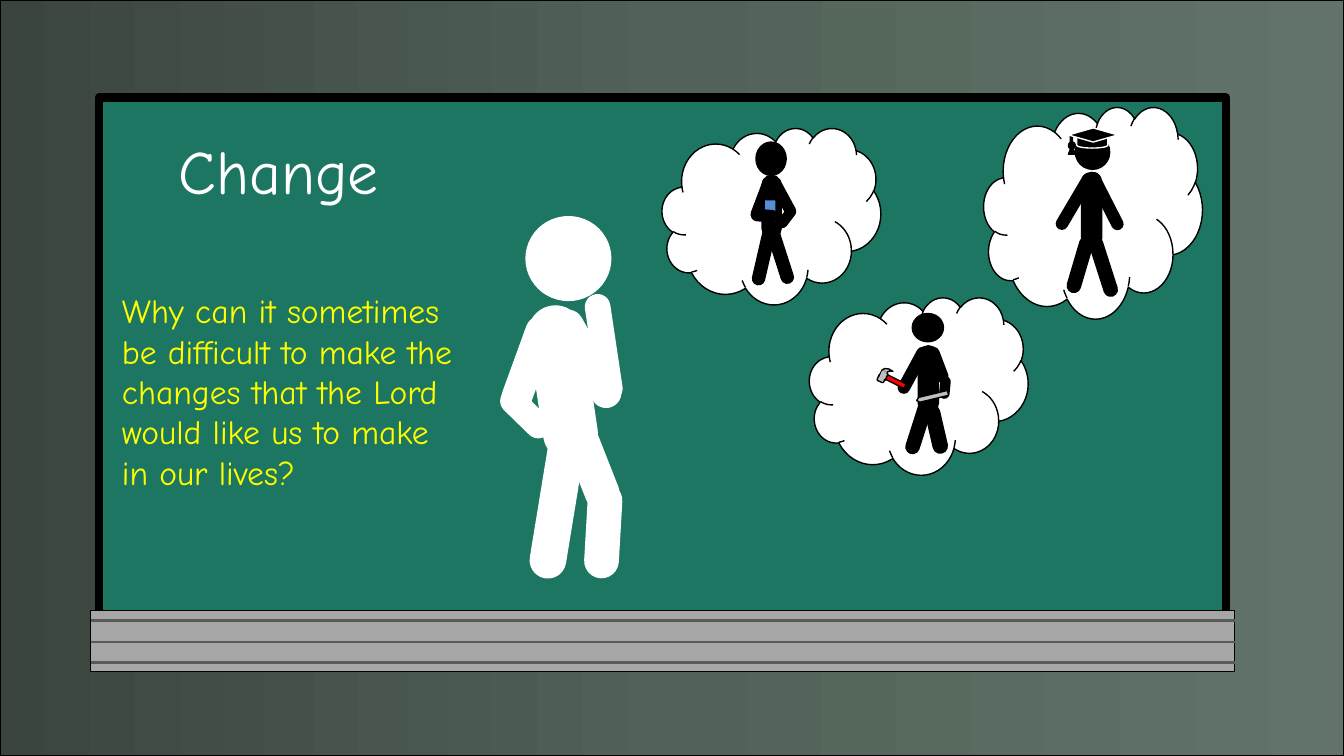
from copy import deepcopy
from pptx import Presentation
from pptx.dml.color import RGBColor
from pptx.enum import shapes, text
from pptx.oxml import ns
from pptx.util import Pt

FONT = "Comic Neue"
BLACK, WHITE, STEEL = "000000", "FFFFFF", "BFBFBF"
WALL = ["3A453E", "526258", "627469"]
BOARD = (70.6, 69.8, 805, 373)
LEDGE = (64.8, 436.3, 817.2, 43.2)
GROOVES = [443.5, 458.6, 473]

TITLE = ("Change", (62, 91.4, 274.3, 60.5), 44, WHITE, text.PP_ALIGN.CENTER)
QUESTION = (
    "Why can it sometimes be difficult to make the changes that the Lord "
    "would like us to make in our lives?",
    (80, 203.8, 256.3, 181.4), 24, "FFFF00", text.PP_ALIGN.LEFT)

# Limbs and heads: left, top, width, height, rotation
THINKER = {
    "limbs": [
        (383, 218.2, 38.2, 110.9, 351.5),
        (354.2, 286.6, 42.5, 17.3, 44.2),
        (409, 218.2, 20.9, 76.3, 330.8),
        (385.2, 308.9, 25.2, 104.4, 9.3),
        (410.4, 298.8, 23.8, 67, 158.5),
        (342, 249.8, 71.3, 20.9, 110),
        (422.6, 210.2, 17.3, 76.3, 351.5),
        (419, 345.6, 23.8, 67, 183.3),
    ],
    "head": (375.8, 154.8, 60.5, 59.8),
    "color": WHITE,
}

# Props: preset, box, fill, line, corner or depth adjustment
BUILDER = {
    "cloud": (578.2, 212.4, 156.2, 126.7),
    "limbs": [
        (655.9, 247, 14.4, 48.2),
        (667.4, 273.6, 15.1, 6.5, 95.8),
        (666, 247.7, 7.9, 25.9, 339.3),
        (651.6, 285.8, 9.4, 38.9, 17.8),
        (663.8, 289.4, 10.1, 34.6, 167),
        (634.3, 260.6, 36, 7.9, 118.5),
    ],
    "head": (651.6, 223.9, 22.3, 20.2),
    "props": [
        ("ROUNDED_RECTANGLE", (637.9, 265, 3.6, 15.1, 116.8), "FF0000", BLACK, None),
        ("MOON", (629.3, 262.1, 6.5, 8.6, 40.5), STEEL, BLACK, 0.51),
        ("ROUNDED_RECTANGLE", (627.1, 267.8, 5, 5, 23.8), STEEL, BLACK, None),
        ("ROUNDED_RECTANGLE", (628.6, 265.7, 5, 5, 23.8), STEEL, BLACK, None),
        ("ROUNDED_RECTANGLE", (628.6, 265, 3.6, 7.2, 23.8), STEEL, None, None),
        ("PENTAGON", (654.5, 281.5, 23, 3.6, 166.4), STEEL, BLACK, None),
    ],
}
READER = {
    "cloud": (473, 91.4, 156.2, 126),
    "limbs": [
        (544.3, 125.3, 13.7, 44.6),
        (553.7, 151.9, 16.6, 6.5, 307.3),
        (540.7, 126.7, 7.9, 31, 20.7),
        (553, 161.3, 8.6, 41.8, 342.2),
        (541.4, 160.6, 8.6, 43.2, 193),
        (545, 137.5, 28.8, 7.2, 241.5),
    ],
    "head": (540, 101.5, 21.6, 23.8),
    "props": [
        ("ROUNDED_RECTANGLE", (545.8, 142.6, 8.6, 16.6), "558ED5", BLACK, 0.04),
        ("ROUNDED_RECTANGLE", (542.2, 144.7, 7.9, 18.7, 94.2), BLACK, BLACK, 0.5),
    ],
}
GRADUATE = {
    "cloud": (702.7, 76.3, 156.2, 151.2),
    "limbs": [
        (772.6, 123.1, 14.4, 54),
        (763.9, 121.7, 7.9, 44.6, 30.5),
        (783.4, 168.5, 9.4, 43.9, 342.2),
        (766.8, 168.5, 9.4, 41, 196.4),
        (767.5, 139.7, 44.6, 7.9, 242.9),
    ],
    "head": (768.2, 96.5, 24.5, 24.5),
    "props": [
        ("ROUNDED_RECTANGLE", (764.6, 96.5, 1.4, 7.2), BLACK, BLACK, None),
        ("OVAL", (763.2, 101.5, 5, 5), BLACK, BLACK, None),
        ("ISOSCELES_TRIANGLE", (763.2, 103.7, 5, 6.5), BLACK, BLACK, None),
        ("CAN", (769, 94.3, 22.3, 11.5), BLACK, WHITE, 0.36),
        ("DIAMOND", (763.2, 91.4, 35.3, 10.1), BLACK, WHITE, None),
    ],
}


def rgb(color):
    return RGBColor.from_string(color)


def draw(parent, preset, box, fill, line=BLACK, adjust=None, weight=1):
    shape = parent.shapes.add_shape(
        shapes.MSO_SHAPE[preset], *(Pt(n) for n in box[:4]))
    shape.shadow.inherit = False
    shape.rotation = box[4] if len(box) > 4 else 0
    shape.fill.solid()
    shape.fill.fore_color.rgb = rgb(fill)
    if line:
        shape.line.color.rgb = rgb(line)
        shape.line.width = Pt(weight)
    else:
        shape.line.fill.background()
    if adjust is not None:
        shape.adjustments[0] = adjust
    return shape


def draw_wall(slide):
    wall = draw(slide, "RECTANGLE", (0, 0, 960, 540), WALL[0])
    wall.fill.gradient()
    wall.fill.gradient_angle = 0
    first = wall.fill.gradient_stops[0]._gs
    first.addnext(deepcopy(first))
    stops = wall.fill.gradient_stops
    for i, (stop, color) in enumerate(zip(stops, WALL)):
        stop.color.rgb = rgb(color)
        stop.position = i / (len(WALL) - 1)


def draw_blackboard(slide):
    group = slide.shapes.add_group_shape()
    draw(group, "RECTANGLE", BOARD, "1C7661", weight=6)
    draw(group, "RECTANGLE", LEDGE, "A6A6A6")
    left, _, width, _ = LEDGE
    for y in GROOVES:
        groove = group.shapes.add_connector(
            shapes.MSO_CONNECTOR.STRAIGHT, Pt(left), Pt(y), Pt(left + width), Pt(y))
        groove.line.color.rgb = rgb("595959")
        groove.line.width = Pt(2)
        groove._element.spPr.append(
            groove._element.makeelement(ns.qn("a:effectLst"), {}))


def draw_person(slide, person):
    """Stick figure, with its thought cloud and props if it has any."""
    group = slide.shapes.add_group_shape()
    color = person.get("color", BLACK)
    if "cloud" in person:
        draw(group, "CLOUD", person["cloud"], WHITE)
    for limb in person["limbs"]:
        draw(group, "ROUNDED_RECTANGLE", limb, color, color, 0.5)
    draw(group, "OVAL", person["head"], color, color)
    for prop in person.get("props", []):
        draw(group, *prop)


def write(slide, words, box, size, color, align):
    frame = slide.shapes.add_textbox(*(Pt(n) for n in box)).text_frame
    frame.word_wrap = True
    frame.auto_size = text.MSO_AUTO_SIZE.SHAPE_TO_FIT_TEXT
    paragraph = frame.paragraphs[0]
    paragraph.alignment = align
    run = paragraph.add_run()
    run.text = words
    run.font.name = FONT
    run.font.size = Pt(size)
    run.font.color.rgb = rgb(color)


def main():
    deck = Presentation()
    deck.slide_width, deck.slide_height = Pt(960), Pt(540)
    slide = deck.slides.add_slide(deck.slide_layouts[6])
    draw_wall(slide)
    draw_blackboard(slide)
    write(slide, *TITLE)
    for person in (THINKER, BUILDER, READER, GRADUATE):
        draw_person(slide, person)
    write(slide, *QUESTION)
    deck.save("out.pptx")


if __name__ == "__main__":
    main()
